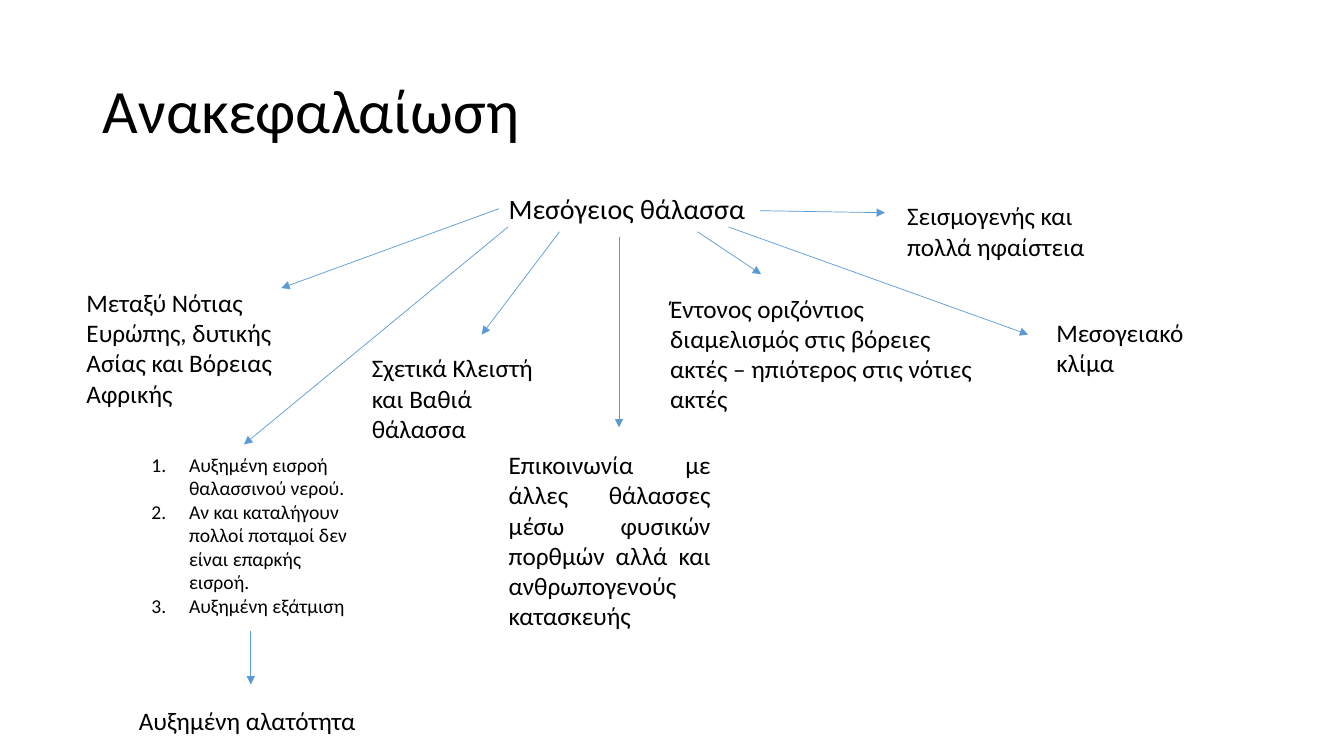
"""Build the recap slide on the Mediterranean Sea as a hub with arrows."""
import dataclasses

import lxml.etree
import pptx
import pptx.dml.color
import pptx.enum.shapes
import pptx.enum.text
import pptx.oxml.ns
import pptx.util

Cm = pptx.util.Cm
Pt = pptx.util.Pt
Align = pptx.enum.text.PP_ALIGN
Fit = pptx.enum.text.MSO_AUTO_SIZE
Anchor = pptx.enum.text.MSO_ANCHOR


@dataclasses.dataclass(frozen=True)
class Theme:
    face: str = "Calibri"
    ink: str = "000000"
    blue: str = "5B9BD5"
    head: int = 44
    hub: int = 20
    note: int = 18
    small: int = 14
    thin: float = 0.5


def color(code):
    return pptx.dml.color.RGBColor.from_string(code)


def apply(target, form):
    for name, value in form.items():
        setattr(target, name, value)


def add_tag(parent, tag, **attrs):
    return lxml.etree.SubElement(parent, pptx.oxml.ns.qn(tag), attrs)


class Board:
    def __init__(self, slide, theme):
        self.slide = slide
        self.theme = theme

    def place(self, shape, spot):
        names = ("left", "top", "width", "height")
        apply(shape, dict(zip(names, map(Cm, spot))))

    def fill(self, shape, lines, size, align=Align.LEFT, space=1.0, count=False):
        frame = shape.text_frame
        frame.text = "\n".join(lines)
        for para in frame.paragraphs:
            if count:
                props = para._p.get_or_add_pPr()
                props.set("marL", str(Cm(0.95)))
                props.set("indent", str(-Cm(0.95)))
                add_tag(props, "a:buFont", typeface="+mj-lt")
                add_tag(props, "a:buAutoNum", type="arabicPeriod")
            apply(para, {"alignment": align, "line_spacing": space,
                         "space_before": Pt(0), "space_after": Pt(0)})
            for run in para.runs:
                apply(run.font, {"name": self.theme.face, "size": Pt(size)})
                run.font.color.rgb = color(self.theme.ink)

    def title(self, text, spot):
        shape = self.slide.shapes.title
        self.place(shape, spot)
        apply(shape.text_frame, {"vertical_anchor": Anchor.MIDDLE,
                                 "word_wrap": True, "auto_size": Fit.NONE})
        self.fill(shape, [text], self.theme.head, space=0.9)

    def list(self, lines, spot):
        shape = self.slide.placeholders[1]
        self.place(shape, spot)
        apply(shape.text_frame, {"vertical_anchor": Anchor.TOP,
                                 "word_wrap": True,
                                 "auto_size": Fit.SHAPE_TO_FIT_TEXT})
        self.fill(shape, lines, self.theme.small, count=True)

    def note(self, text, spot, size=None, align=Align.LEFT):
        shape = self.slide.shapes.add_textbox(*map(Cm, spot))
        apply(shape.text_frame, {"word_wrap": True,
                                 "auto_size": Fit.SHAPE_TO_FIT_TEXT})
        self.fill(shape, [text], size or self.theme.note, align)

    def arrow(self, ends):
        kind = pptx.enum.shapes.MSO_CONNECTOR.STRAIGHT
        shape = self.slide.shapes.add_connector(kind, *map(Cm, ends))
        shape.line.width = Pt(self.theme.thin)
        shape.line.color.rgb = color(self.theme.blue)
        add_tag(shape.line._get_or_add_ln(), "a:tailEnd", type="triangle")
        add_tag(shape._element.spPr, "a:effectLst")


NOTES = [
    ("Μεταξύ Νότιας Ευρώπης, δυτικής Ασίας και Βόρειας Αφρικής",
     (1.93, 7.11, 5.92, 3.33), Align.LEFT),
    ("Σχετικά Κλειστή και Βαθιά θάλασσα",
     (9.12, 8.76, 4.72, 2.57), Align.LEFT),
    ("Επικοινωνία με άλλες θάλασσες μέσω φυσικών πορθμών αλλά και "
     "ανθρωπογενούς κατασκευής",
     (12.57, 11.2, 5.59, 4.88), Align.JUSTIFY),
    ("Έντονος οριζόντιος διαμελισμός στις βόρειες ακτές – ηπιότερος "
     "στις νότιες ακτές",
     (16.64, 7.26, 8.31, 3.33), Align.LEFT),
    ("Σεισμογενής και πολλά ηφαίστεια",
     (22.61, 4.93, 6.32, 1.8), Align.LEFT),
    ("Μεσογειακό κλίμα", (26.37, 7.87, 4.72, 1.8), Align.LEFT),
    ("Αυξημένη αλατότητα", (3.25, 17.65, 7.77, 1.02), Align.LEFT),
]

CAUSES = [
    "Αυξημένη εισροή θαλασσινού νερού.",
    "Αν και καταλήγουν πολλοί ποταμοί δεν είναι επαρκής εισροή.",
    "Αυξημένη εξάτμιση",
]

ARROWS = [
    (12.57, 5.26, 7.09, 7.26),
    (14.1, 5.84, 12.14, 8.43),
    (15.6, 5.97, 15.6, 10.77),
    (17.58, 5.84, 19.18, 6.91),
    (19.15, 5.31, 22.3, 5.36),
    (18.36, 5.72, 25.91, 8.43),
    (12.8, 5.72, 6.15, 11.2),
    (6.32, 15.9, 6.32, 17.25),
]


def main():
    deck = pptx.Presentation()
    apply(deck, {"slide_width": Cm(33.87), "slide_height": Cm(19.05)})
    theme = Theme()
    board = Board(deck.slides.add_slide(deck.slide_layouts[1]), theme)
    board.title("Ανακεφαλαίωση", (2.34, 1.02, 29.21, 3.68))
    board.list(CAUSES, (3.56, 11.28, 5.59, 4.45))
    board.note("Μεσόγειος θάλασσα", (12.57, 4.7, 7.54, 1.12), theme.hub)
    for text, spot, align in NOTES:
        board.note(text, spot, align=align)
    for ends in ARROWS:
        board.arrow(ends)
    deck.save("out.pptx")


if __name__ == "__main__":
    main()
